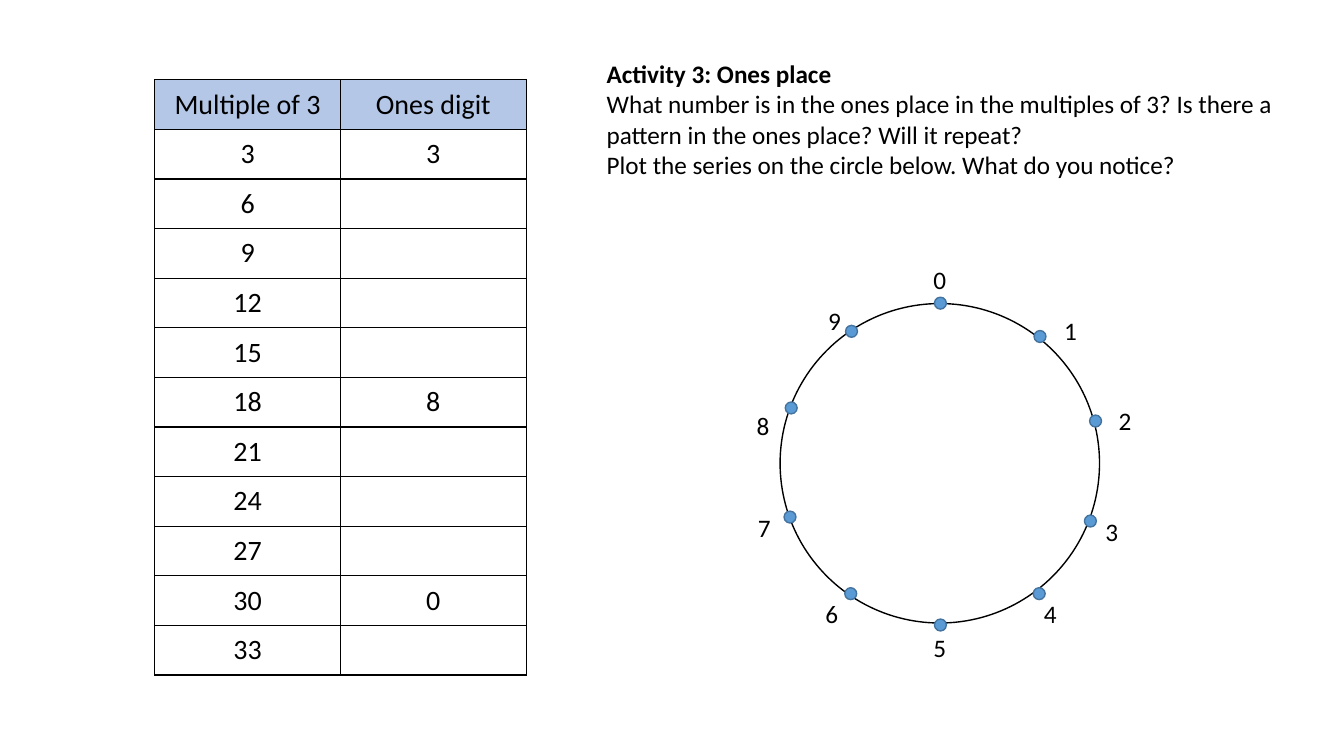
"""Build a worksheet slide on the ones digits of the multiples of 3."""
from lxml.etree import SubElement
from pptx import Presentation
from pptx.dml.color import RGBColor
from pptx.enum.shapes import MSO_SHAPE
from pptx.enum.text import MSO_ANCHOR, MSO_AUTO_SIZE, PP_ALIGN
from pptx.oxml.ns import qn
from pptx.util import Cm, Pt

BLACK, HEADER_BLUE, DOT_BLUE, DOT_EDGE = "000000", "B4C7E7", "5B9BD5", "43739E"
BODY = {"name": "Calibri", "size": Pt(18), "bold": False}
HEADING = {**BODY, "bold": True}
TABLE_TEXT = {**BODY, "size": Pt(20)}
DOT_SIZE = 0.3
HEADERS = ("Multiple of 3", "Ones digit")
GIVEN_DIGITS = {3: "3", 18: "8", 30: "0"}
ACTIVITY = [
    ("Activity 3: Ones place", HEADING),
    ("What number is in the ones place in the multiples of 3? "
     "Is there a pattern in the ones place? Will it repeat?", BODY),
    ("Plot the series on the circle below. What do you notice?", BODY),
]
DIGIT_PLACES = [
    ((23.55, 7.49), (23.27, 6.53)),
    ((26.06, 8.33), (26.57, 7.82)),
    ((27.46, 10.46), (27.94, 10.08)),
    ((27.33, 12.98), (27.61, 12.88)),
    ((26.04, 14.81), (26.06, 14.96)),
    ((23.55, 15.6), (23.27, 15.82)),
    ((21.29, 14.81), (20.55, 14.96)),
    ((19.76, 12.88), (18.85, 12.78)),
    ((19.79, 10.13), (18.82, 10.21)),
    ((21.31, 8.2), (20.62, 7.57)),
]


def color(value):
    """Return the colour for a hex string."""
    return RGBColor.from_string(value)


def write(paragraph, text, font_format):
    """Add a black run with the given font format to a paragraph."""
    font_run = paragraph.add_run()
    font_run.text = text
    for attribute, value in font_format.items():
        setattr(font_run.font, attribute, value)
    font_run.font.color.rgb = color(BLACK)


def add_text(slide, left, top, width, height, lines, wrap=True):
    """Add a text box with one paragraph per (text, format) pair."""
    box = slide.shapes.add_textbox(Cm(left), Cm(top), Cm(width), Cm(height))
    frame = box.text_frame
    frame.word_wrap = wrap
    frame.auto_size = MSO_AUTO_SIZE.SHAPE_TO_FIT_TEXT
    for index, (text, font_format) in enumerate(lines):
        paragraph = frame.add_paragraph() if index else frame.paragraphs[0]
        write(paragraph, text, font_format)


def add_circle(slide, left, top, diameter, edge, fill=None):
    """Add a circle with a thin edge and an optional fill."""
    shape = slide.shapes.add_shape(
        MSO_SHAPE.OVAL, Cm(left), Cm(top), Cm(diameter), Cm(diameter))
    shape.shadow.inherit = False
    shape.line.color.rgb = color(edge)
    shape.line.width = Pt(1)
    if fill:
        shape.fill.solid()
        shape.fill.fore_color.rgb = color(fill)
    else:
        shape.fill.background()


def add_borders(cell):
    """Draw a thin black line on each side of a table cell."""
    properties = cell._tc.get_or_add_tcPr()
    for side in ("a:lnL", "a:lnR", "a:lnT", "a:lnB"):
        line = SubElement(properties, qn(side), w=str(Pt(1)))
        fill = SubElement(line, qn("a:solidFill"))
        SubElement(fill, qn("a:srgbClr"), val=BLACK)


def fill_cell(cell, text, fill):
    """Format a table cell and write its centred text."""
    add_borders(cell)
    if fill:
        cell.fill.solid()
        cell.fill.fore_color.rgb = color(fill)
    else:
        cell.fill.background()
    cell.vertical_anchor = MSO_ANCHOR.MIDDLE
    if text:
        paragraph = cell.text_frame.paragraphs[0]
        paragraph.alignment = PP_ALIGN.CENTER
        write(paragraph, text, TABLE_TEXT)


def add_digit_table(slide, left, top, column_width, row_height):
    """Add the table of multiples and their ones digits."""
    rows = [HEADERS] + [
        (str(multiple), GIVEN_DIGITS.get(multiple, ""))
        for multiple in range(3, 34, 3)]
    table = slide.shapes.add_table(
        len(rows), len(HEADERS), Cm(left), Cm(top),
        Cm(column_width * len(HEADERS)), Cm(row_height * len(rows))).table
    table.first_row = table.horz_banding = False
    for column in table.columns:
        column.width = Cm(column_width)
    for row_index, row in enumerate(rows):
        table.rows[row_index].height = Cm(row_height)
        for column_index, text in enumerate(row):
            fill = None if row_index else HEADER_BLUE
            fill_cell(table.cell(row_index, column_index), text, fill)


def add_digit_circle(slide):
    """Add the circle with its ten dots and digit labels."""
    add_circle(slide, 19.66, 7.65, 8.05, BLACK)
    for digit, (dot, label) in enumerate(DIGIT_PLACES):
        add_circle(slide, *dot, DOT_SIZE, DOT_EDGE, DOT_BLUE)
        add_text(slide, *label, 0.84, 1.02, [(str(digit), BODY)], wrap=False)


def main():
    """Build and save the slide."""
    presentation = Presentation()
    presentation.slide_width = Cm(33.87)
    presentation.slide_height = Cm(19.05)
    slide = presentation.slides.add_slide(presentation.slide_layouts[6])
    add_digit_table(slide, 3.9, 2.01, 4.68, 1.25)
    add_text(slide, 15.04, 1.35, 18.34, 3.33, ACTIVITY)
    add_digit_circle(slide)
    presentation.save("out.pptx")


if __name__ == "__main__":
    main()
